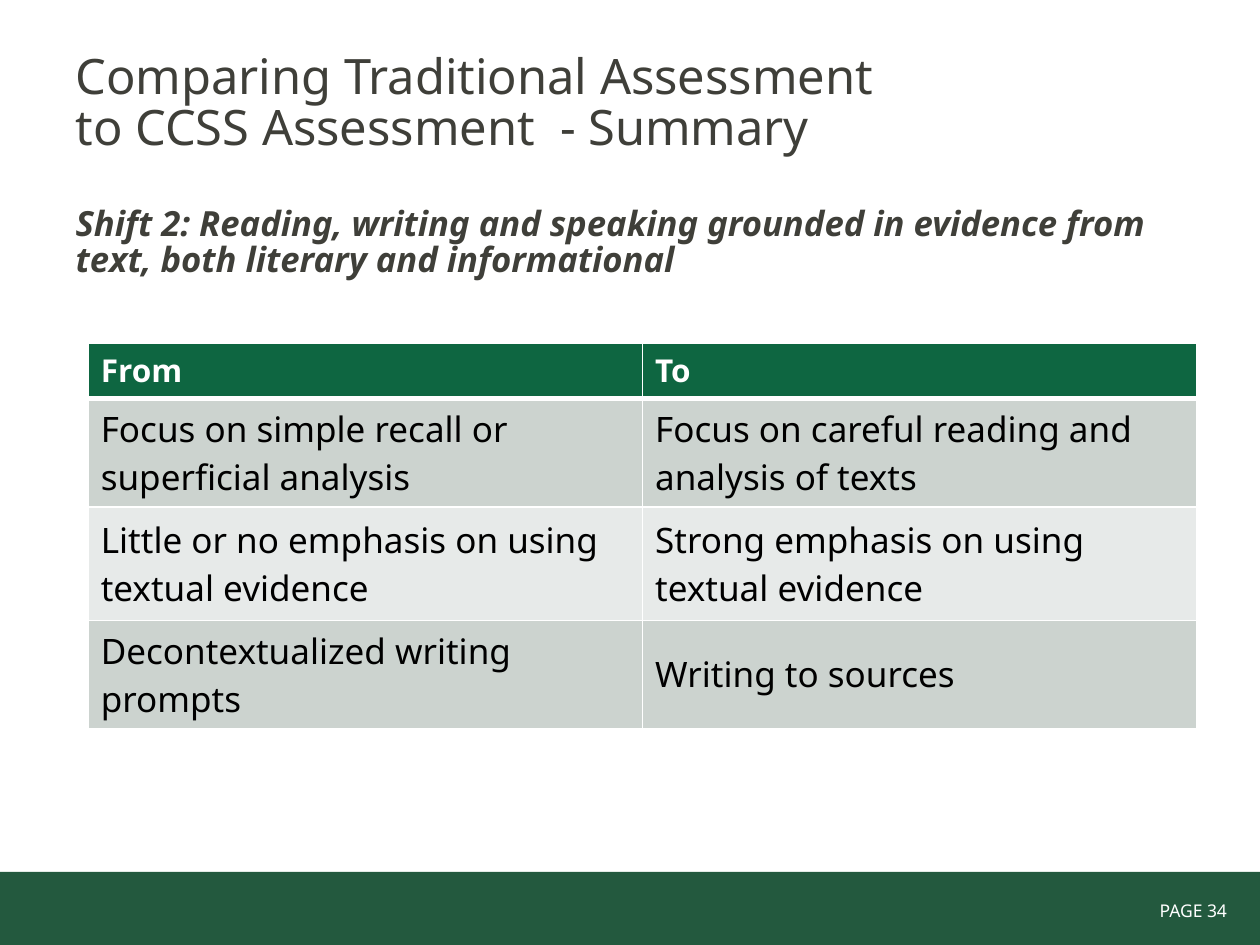
from lxml import etree
from pptx import Presentation
from pptx.dml.color import RGBColor
from pptx.enum import shapes, text
from pptx.oxml import ns
from pptx.util import Pt

FONT = "Noto Sans"
WHITE = RGBColor(0xFF, 0xFF, 0xFF)
BLACK = RGBColor(0, 0, 0)
INK = RGBColor(0x3F, 0x3F, 0x39)
BAND_GREEN = RGBColor(0x23, 0x59, 0x3E)
HEADER_GREEN = RGBColor(0x0E, 0x66, 0x41)
ROW_DARK = RGBColor(0xCC, 0xD3, 0xCF)
ROW_LIGHT = RGBColor(0xE7, 0xEA, 0xE9)


def style(paragraph, size, color, bold=False, italic=False):
    for run in paragraph.runs:
        run.font.name = FONT
        run.font.size = Pt(size)
        run.font.color.rgb = color
        run.font.bold = bold
        run.font.italic = italic


def add_border(cell, side, width):
    line = etree.Element(ns.qn(f"a:{side}"), w=str(Pt(width)))
    fill = etree.SubElement(line, ns.qn("a:solidFill"))
    etree.SubElement(fill, ns.qn("a:srgbClr"), val=str(WHITE))
    return line


prs = Presentation()
prs.slide_width, prs.slide_height = Pt(720), Pt(540)
slide = prs.slides.add_slide(prs.slide_layouts[5])

footer_band = slide.shapes.add_shape(
    shapes.MSO_SHAPE.RECTANGLE, Pt(0), Pt(498.2), Pt(720), Pt(41.8))
footer_band.shadow.inherit = False
footer_band.fill.solid()
footer_band.fill.fore_color.rgb = BAND_GREEN
footer_band.line.fill.background()

page_label = slide.shapes.add_textbox(Pt(596), Pt(510.5), Pt(112.2), Pt(19.4))
page_label.text_frame.word_wrap = True
page_label.text_frame.text = "PAGE 34"
page_line = page_label.text_frame.paragraphs[0]
page_line.alignment = text.PP_ALIGN.RIGHT
style(page_line, 10, WHITE)

title = slide.shapes.title
title.left, title.top, title.width, title.height = Pt(36), Pt(30.5), Pt(648), Pt(145)
heading = title.text_frame
heading.word_wrap = True
heading.auto_size = text.MSO_AUTO_SIZE.NONE
heading.vertical_anchor = text.MSO_ANCHOR.TOP
heading.margin_top = heading.margin_bottom = Pt(0)
heading.text = ("Comparing Traditional Assessment\vto CCSS Assessment  - Summary\n"
                "Shift 2: Reading, writing and speaking grounded in evidence from text, "
                "both literary and informational")
topic, shift = heading.paragraphs
for paragraph in heading.paragraphs:
    paragraph.alignment = text.PP_ALIGN.LEFT
    paragraph.line_spacing = 0.87
shift.space_before = Pt(30)
style(topic, 27.9, INK)
style(shift, 19.8, INK, bold=True, italic=True)

comparison = [
    ("From", "To"),
    ("Focus on simple recall or superficial analysis",
     "Focus on careful reading and analysis of texts"),
    ("Little or no emphasis on using textual evidence",
     "Strong emphasis on using textual evidence"),
    ("Decontextualized writing prompts", "Writing to sources"),
]
row_heights = [31.7, 62, 64.8, 61.7]
table = slide.shapes.add_table(
    len(comparison), 2, Pt(50.4), Pt(196), Pt(633.6), Pt(sum(row_heights))).table
for column in table.columns:
    column.width = Pt(316.8)

for r, (entries, height) in enumerate(zip(comparison, row_heights)):
    table.rows[r].height = Pt(height)
    header = r == 0
    for c, entry in enumerate(entries):
        cell = table.cell(r, c)
        cell.text = entry
        cell.vertical_anchor = text.MSO_ANCHOR.TOP if header else text.MSO_ANCHOR.MIDDLE
        style(cell.text_frame.paragraphs[0], 18 if header else 20,
              WHITE if header else BLACK, bold=header)
        cell.fill.solid()
        cell.fill.fore_color.rgb = HEADER_GREEN if header else (ROW_LIGHT, ROW_DARK)[r % 2]
        widths = {"lnL": 1, "lnR": 1, "lnT": 3 if r == 1 else 1, "lnB": 3 if header else 1}
        properties = cell._tc.get_or_add_tcPr()
        for position, (side, width) in enumerate(widths.items()):
            properties.insert(position, add_border(cell, side, width))

prs.save("out.pptx")
